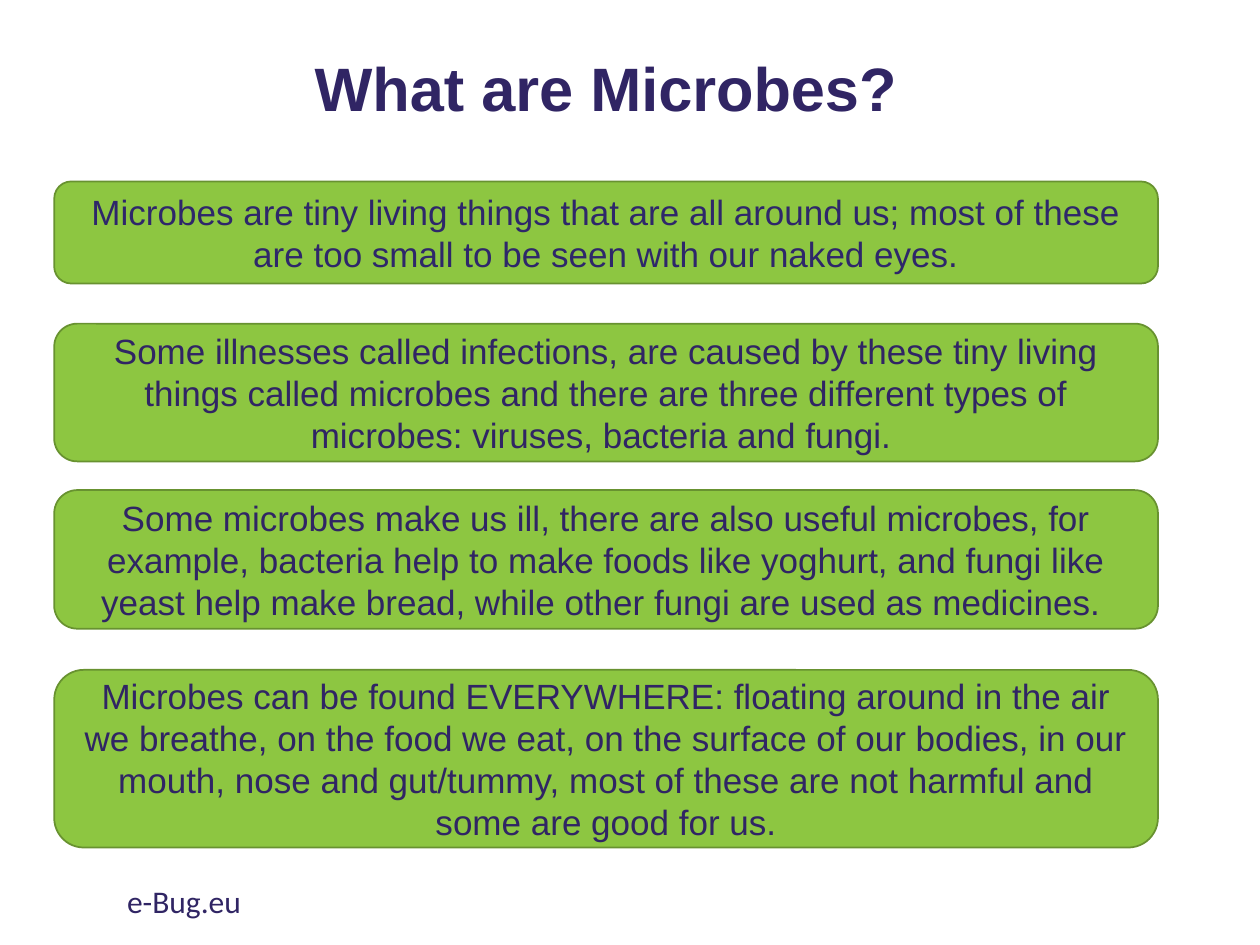
from pptx import Presentation
from pptx.dml.color import RGBColor
from pptx.enum.shapes import MSO_SHAPE
from pptx.enum.text import MSO_ANCHOR, PP_ALIGN
from pptx.util import Pt

ROUNDED = MSO_SHAPE.ROUNDED_RECTANGLE
MIDDLE = MSO_ANCHOR.MIDDLE
CENTER = PP_ALIGN.CENTER

COLORS = {"ink": "302564", "first_ink": "2E276A", "green": "8DC641", "edge": "689230"}


def rgb(name):
    return RGBColor.from_string(COLORS[name])


def write(sp, text, size, font, color="ink", bold=False):
    """Fill the shape with one wrapped paragraph and return it."""
    tf = sp.text_frame
    tf.word_wrap = True
    p = tf.paragraphs[0]
    p.text = text
    p.font.size = Pt(size)
    p.font.name = font
    p.font.bold = bold
    p.font.color.rgb = rgb(color)
    return p


prs = Presentation()
prs.slide_width, prs.slide_height = Pt(720), Pt(540)
s = prs.slides.add_slide(prs.slide_layouts[6])

title = s.shapes.add_textbox(Pt(36), Pt(0), Pt(620.6), Pt(104.4))
p = write(title, "What are Microbes?", 35, "Arial", bold=True)
p.alignment = CENTER
p.line_spacing = 0.9
title.text_frame.vertical_anchor = MIDDLE

site = s.shapes.add_textbox(Pt(65.5), Pt(500.4), Pt(243.4), Pt(28.8))
write(site, "e-Bug.eu", 18, "Calibri")

# top, height, text colour, text
facts = [
    (103.7, 58.3, "first_ink",
     "Microbes are tiny living things that are all around us; most of these "
     "are too small to be seen with our naked eyes."),
    (185, 78.7, "ink",
     "Some illnesses called infections, are caused by these tiny living things "
     "called microbes and there are three different types of microbes: viruses, "
     "bacteria and fungi. "),
    (280.1, 79.2, "ink",
     "Some microbes make us ill, there are also useful microbes, for example, "
     "bacteria help to make foods like yoghurt, and fungi like yeast help make "
     "bread, while other fungi are used as medicines. "),
    (382.8, 101.5, "ink",
     "Microbes can be found EVERYWHERE: floating around in the air we breathe, "
     "on the food we eat, on the surface of our bodies, in our mouth, nose and "
     "gut/tummy, most of these are not harmful and some are good for us."),
]
for top, height, color, text in facts:
    sp = s.shapes.add_shape(ROUNDED, Pt(31), Pt(top), Pt(630.7), Pt(height))
    sp.shadow.inherit = False
    sp.fill.solid()
    sp.fill.fore_color.rgb = rgb("green")
    sp.line.color.rgb = rgb("edge")
    sp.line.width = Pt(1)
    write(sp, text, 20, "Arial", color).alignment = CENTER
    sp.text_frame.vertical_anchor = MIDDLE

prs.save("out.pptx")
